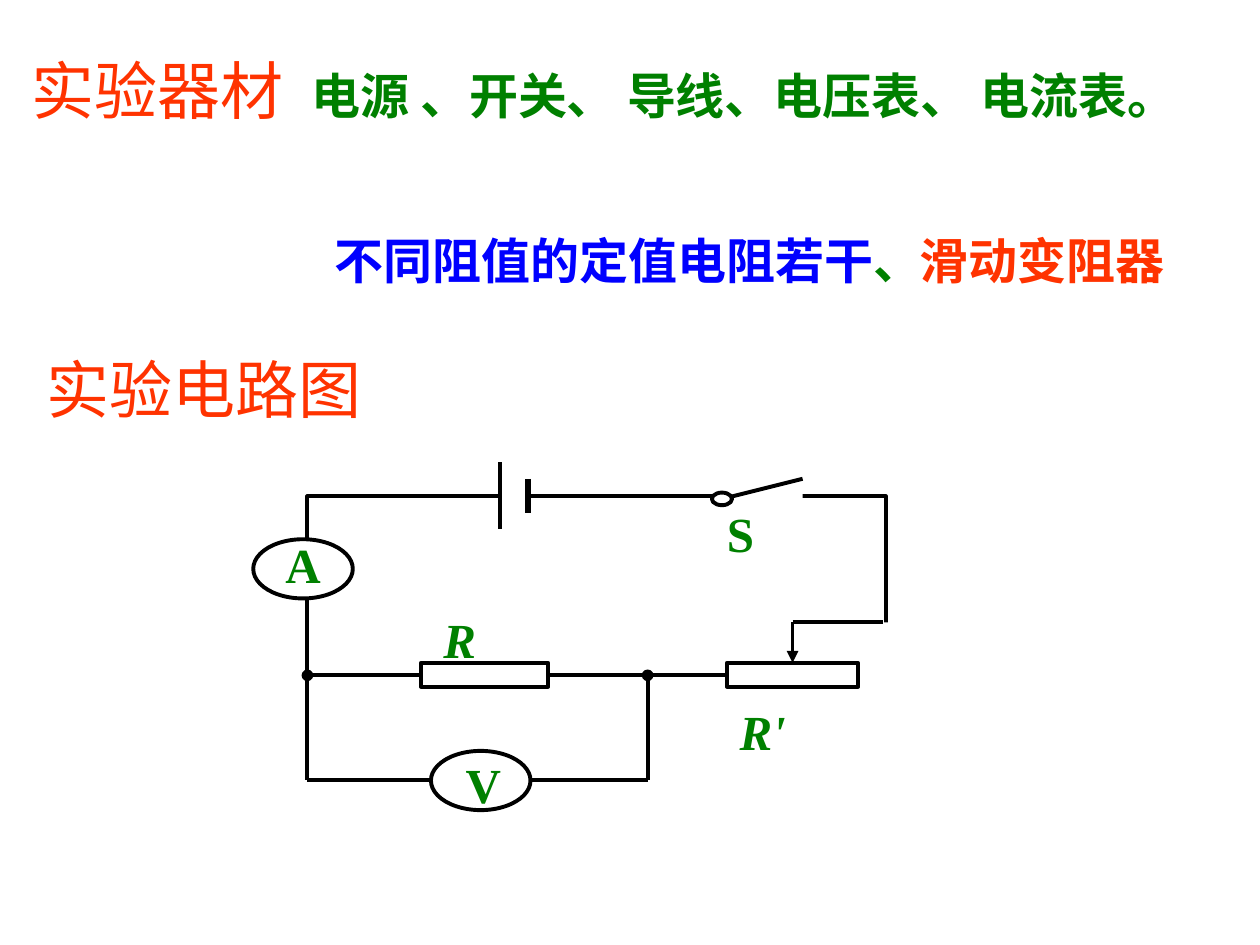
"""Builds a slide listing apparatus and drawing a resistance-measuring circuit."""
from lxml.etree import SubElement
from pptx import Presentation
from pptx.dml.color import RGBColor
from pptx.enum.shapes import MSO_CONNECTOR as LINE, MSO_SHAPE as SHAPE
from pptx.enum.text import MSO_ANCHOR as ANCHOR, PP_ALIGN as ALIGN
from pptx.oxml.ns import qn
from pptx.util import Inches, Pt

RED = RGBColor(0xFF, 0x33, 0x00)
GREEN = RGBColor(0x00, 0x80, 0x00)
BLUE = RGBColor(0x00, 0x00, 0xFF)
BLACK = RGBColor(0x00, 0x00, 0x00)
WHITE = RGBColor(0xFF, 0xFF, 0xFF)
SERIF, SANS, HEADING = "Times New Roman", "Arial", "Roboto"

TITLE = [("实验器材\t", 36, HEADING, RED, False),
         ("电源 、开关、 导线、电压表、 电流表。", 28, HEADING, GREEN, True)]
BODY = [("实验电路图", 36, SERIF, RED, False)]
RESISTORS = [("不同阻值的定值电阻若干", 28, SANS, BLUE, True),
             ("、", 28, SANS, GREEN, True)]
RHEOSTAT = [("滑动变阻器", 28, SANS, RED, True)]

LEFT, TOP, NODE, RIGHT, BOTTOM = 2.44, 3.94, 5.14, 7.03, 6.19
MIDDLE = 5.36
METER = (0.79, 0.47)
BATTERY_LEFT, BATTERY_RIGHT = 3.97, 4.19
SLIDER_X, SLIDER_Y, RHEOSTAT_TOP = 6.29, 4.94, 5.26

LOOP = (LEFT, TOP, RIGHT - LEFT, MIDDLE - TOP)
GAPS = [(BATTERY_LEFT, 3.85, BATTERY_RIGHT - BATTERY_LEFT, 0.13),
        (5.73, 3.8, 0.64, 0.27),
        (5.77, SLIDER_Y, 1.65, 0.51)]
PARTS = [(SHAPE.OVAL, (5.65, 3.91, 0.16, 0.1)),
         (SHAPE.RECTANGLE, (3.34, RHEOSTAT_TOP, 1.01, 0.19)),
         (SHAPE.OVAL, (2.01, 4.28, *METER))]
WIRES = [((BATTERY_LEFT, 3.67), (BATTERY_LEFT, 4.2), 2.25, None),
         ((BATTERY_RIGHT, 3.8), (BATTERY_RIGHT, 4.07), 3, None),
         ((5.73, 3.96), (6.37, 3.8), 2.25, None),
         ((SLIDER_X, SLIDER_Y), (7.01, SLIDER_Y), 2.25, None),
         ((LEFT, BOTTOM), (NODE, BOTTOM), 2.25, None),
         ((LEFT, BOTTOM), (LEFT, MIDDLE), 2.25, "oval"),
         ((NODE, BOTTOM), (NODE, MIDDLE), 2.25, "oval")]
LABELS = [("A", (2.01, 4.19, 0.79, 0.57), 0.1, ALIGN.CENTER, False),
          ("V", (3.44, 5.94, 0.79, 0.57), 0.1, ALIGN.CENTER, False),
          ("R", (3.42, 4.79, 0.95, 0.57), 0.1, ALIGN.LEFT, True),
          ("R'", (5.87, 5.57, 1.4, 0.47), 0, ALIGN.LEFT, True),
          ("S", (5.77, 4.0, 0.63, 0.47), 0, ALIGN.LEFT, False)]


def inches(values):
    return [Inches(value) for value in values]


def write(box, spans, align=ALIGN.LEFT, italic=False, inset=0.1):
    frame = box.text_frame
    frame.word_wrap = True
    frame.vertical_anchor = ANCHOR.TOP
    frame.margin_left = frame.margin_right = Inches(inset)
    frame.margin_top = frame.margin_bottom = Inches(inset / 2)
    para = frame.paragraphs[0]
    para.alignment = align
    para.space_before = Pt(0)
    for text, size, face, color, bold in spans:
        span = para.add_run()
        span.text = text
        font = span.font
        font.size, font.name, font.bold, font.italic = Pt(size), face, bold, italic
        font.color.rgb = color
    return para


def place(holder, area):
    holder.left, holder.top, holder.width, holder.height = inches(area)


def add_part(page, kind, area, filled=True, outlined=True):
    part = page.shapes.add_shape(kind, *inches(area))
    part.shadow.inherit = False
    if filled:
        part.fill.solid()
        part.fill.fore_color.rgb = WHITE
    else:
        part.fill.background()
    if outlined:
        part.line.color.rgb = BLACK
        part.line.width = Pt(2.25)
    else:
        part.line.fill.background()
    return part


def add_wire(page, start, end, width, tail):
    wire = page.shapes.add_connector(LINE.STRAIGHT, *inches(start + end))
    wire.line.color.rgb = BLACK
    wire.line.width = Pt(width)
    if tail:
        SubElement(wire.line._get_or_add_ln(), qn("a:tailEnd"), type=tail)
    SubElement(wire._element.spPr, qn("a:effectLst"))
    return wire


def main():
    deck = Presentation()
    deck.slide_width, deck.slide_height = Inches(10), Inches(7.5)
    page = deck.slides.add_slide(deck.slide_layouts[1])
    title, body = page.placeholders

    place(title, (0.15, 0.36, 9.58, 2.31))
    para = write(title, TITLE)
    tabs = SubElement(para._p.get_or_add_pPr(), qn("a:tabLst"))
    SubElement(tabs, qn("a:tab"), pos=str(Inches(2.22)), algn="l")

    place(body, (0.27, 2.73, 9, 3.97))
    props = write(body, BODY)._p.get_or_add_pPr()
    props.set("marL", "0")
    props.set("indent", "0")
    SubElement(props, qn("a:buNone"))

    add_part(page, SHAPE.RECTANGLE, LOOP, filled=False)
    for gap in GAPS:
        add_part(page, SHAPE.RECTANGLE, gap, outlined=False)
    for wire in WIRES:
        add_wire(page, *wire)
    for kind, area in PARTS:
        add_part(page, kind, area)
    add_part(page, SHAPE.OVAL, (3.42, 5.96, *METER))
    rheostat = add_part(page, SHAPE.RECTANGLE, (5.77, RHEOSTAT_TOP, 1.04, 0.19))
    slider = add_wire(page, (SLIDER_X, SLIDER_Y), (SLIDER_X, RHEOSTAT_TOP), 2.25, "triangle")
    slider.end_connect(rheostat, 0)

    for text, area, inset, align, italic in LABELS:
        box = page.shapes.add_textbox(*inches(area))
        write(box, [(text, 28, SERIF, GREEN, True)], align, italic, inset)

    write(page.shapes.add_textbox(*inches((2.56, 1.78, 4.7, 0.57))), RESISTORS)
    box = page.shapes.add_textbox(*inches((7.2, 1.78, 2.15, 0.57)))
    write(box, RHEOSTAT)
    box.text_frame.word_wrap = False
    deck.save("out.pptx")


if __name__ == "__main__":
    main()
